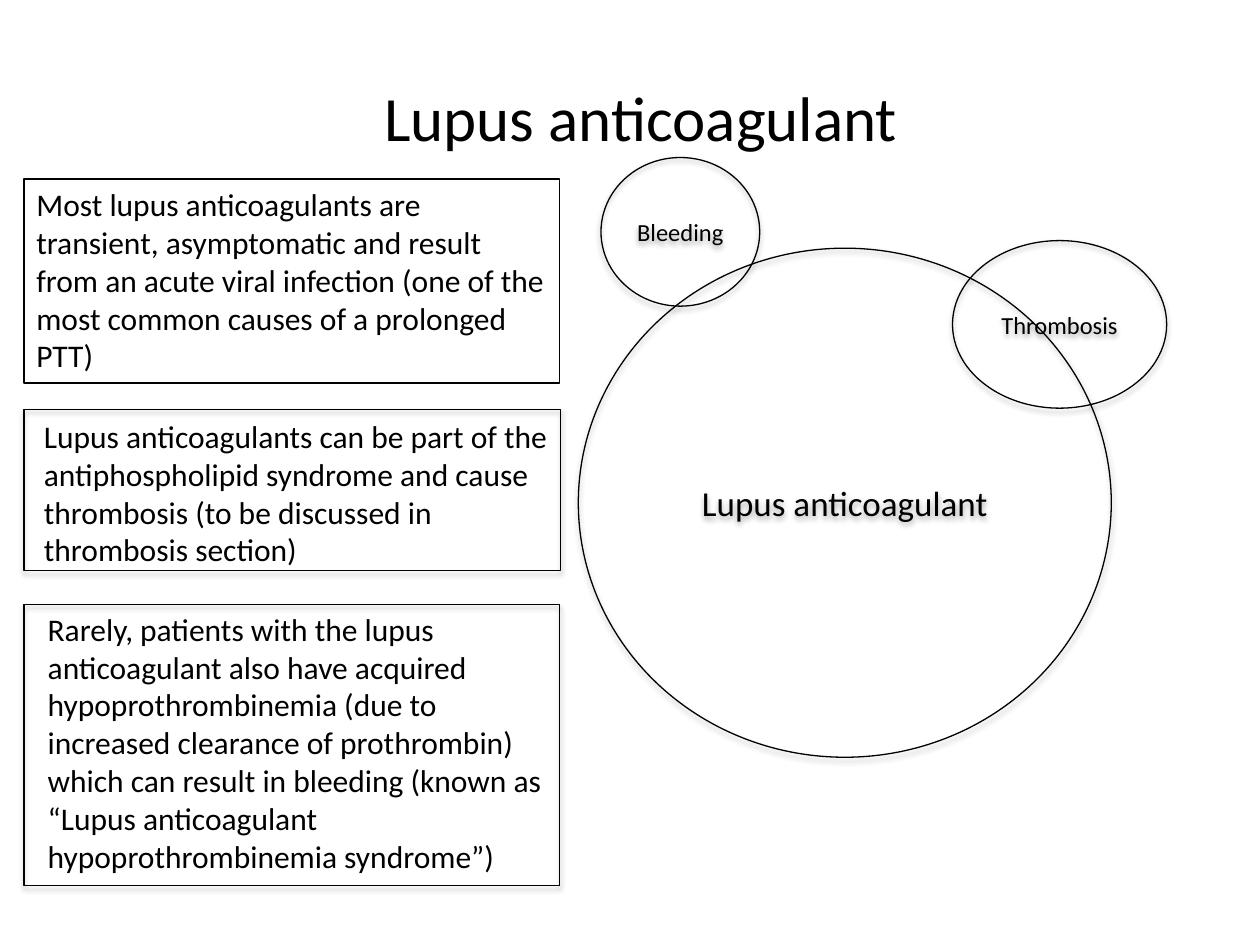
from dataclasses import dataclass

from lxml.etree import SubElement
from pptx import Presentation
from pptx.dml.color import RGBColor
from pptx.enum.shapes import MSO_SHAPE
from pptx.enum.text import MSO_ANCHOR, MSO_AUTO_SIZE, PP_ALIGN
from pptx.oxml.ns import qn
from pptx.util import Inches, Pt


@dataclass(frozen=True)
class Theme:
    font: str = "Calibri"
    ink: RGBColor = RGBColor(0, 0, 0)
    title_size: int = 36
    main_size: int = 20
    body_size: int = 18
    label_size: int = 14
    outline: float = 0.75
    shadow_blur: float = 3.1
    shadow_distance: float = 1.8
    shadow_opacity: int = 35


class SlideBuilder:
    def __init__(self, slide, theme):
        self.slide = slide
        self.theme = theme

    def set_text(self, shape, text, size, align, anchor):
        frame = shape.text_frame
        frame.word_wrap = True
        frame.vertical_anchor = anchor
        paragraph = frame.paragraphs[0]
        paragraph.alignment = align
        run = paragraph.add_run()
        run.text = text
        run.font.name = self.theme.font
        run.font.size = Pt(size)
        run.font.color.rgb = self.theme.ink

    def cast_shadow(self, shape):
        """Add a soft shadow straight below the shape."""
        effects = shape._element.spPr.find(qn("a:effectLst"))
        shadow = SubElement(
            effects, qn("a:outerShdw"),
            blurRad=str(Pt(self.theme.shadow_blur)),
            dist=str(Pt(self.theme.shadow_distance)),
            dir=str(90 * 60000), rotWithShape="0")
        color = SubElement(shadow, qn("a:srgbClr"), val=str(self.theme.ink))
        SubElement(color, qn("a:alpha"), val=str(self.theme.shadow_opacity * 1000))

    def outline(self, preset, box, shadow=True):
        shape = self.slide.shapes.add_shape(preset, *map(Inches, box))
        shape.fill.background()
        shape.line.color.rgb = self.theme.ink
        shape.line.width = Pt(self.theme.outline)
        shape.shadow.inherit = False
        if shadow:
            self.cast_shadow(shape)
        return shape

    def circle(self, text, box, size):
        shape = self.outline(MSO_SHAPE.OVAL, box)
        self.set_text(shape, text, size, PP_ALIGN.CENTER, MSO_ANCHOR.MIDDLE)

    def title(self, text, box):
        shape = self.slide.shapes.add_textbox(*map(Inches, box))
        self.set_text(shape, text, self.theme.title_size,
                      PP_ALIGN.CENTER, MSO_ANCHOR.MIDDLE)

    def fill_note(self, shape, text):
        self.set_text(shape, text, self.theme.body_size,
                      PP_ALIGN.LEFT, MSO_ANCHOR.TOP)
        shape.text_frame.auto_size = MSO_AUTO_SIZE.SHAPE_TO_FIT_TEXT

    def framed_note(self, text, box):
        self.fill_note(self.outline(MSO_SHAPE.RECTANGLE, box, shadow=False), text)

    def note(self, text, box):
        self.fill_note(self.slide.shapes.add_textbox(*map(Inches, box)), text)

    def frame(self, box):
        self.outline(MSO_SHAPE.RECTANGLE, box)


def main():
    presentation = Presentation()
    presentation.slide_width = Inches(10)
    presentation.slide_height = Inches(7.5)
    theme = Theme()
    builder = SlideBuilder(
        presentation.slides.add_slide(presentation.slide_layouts[6]), theme)

    builder.title("Lupus anticoagulant", (0.42, 0.48, 9.33, 0.88))

    builder.circle("Thrombosis", (7.56, 1.91, 1.7, 1.33), theme.label_size)
    builder.circle("Bleeding", (4.77, 1.25, 1.26, 1.18), theme.label_size)
    builder.circle("Lupus anticoagulant", (4.59, 1.97, 4.23, 4.04), theme.main_size)

    builder.framed_note(
        "Most lupus anticoagulants are transient, asymptomatic and result from "
        "an acute viral infection (one of the most common causes of a "
        "prolonged PTT)", (0.19, 1.42, 4.25, 1.62))
    builder.note(
        "Lupus anticoagulants can be part of the antiphospholipid syndrome and "
        "cause thrombosis (to be discussed in thrombosis section)",
        (0.25, 3.26, 4.25, 1.31))
    builder.note(
        "Rarely, patients with the lupus anticoagulant also have acquired "
        "hypoprothrombinemia (due to increased clearance of prothrombin) which "
        "can result in bleeding (known as “Lupus anticoagulant "
        "hypoprothrombinemia syndrome”)", (0.28, 4.79, 4.25, 2.22))
    builder.frame((0.19, 3.25, 4.26, 1.28))
    builder.frame((0.19, 4.8, 4.25, 2.23))

    presentation.save("out.pptx")


if __name__ == "__main__":
    main()
